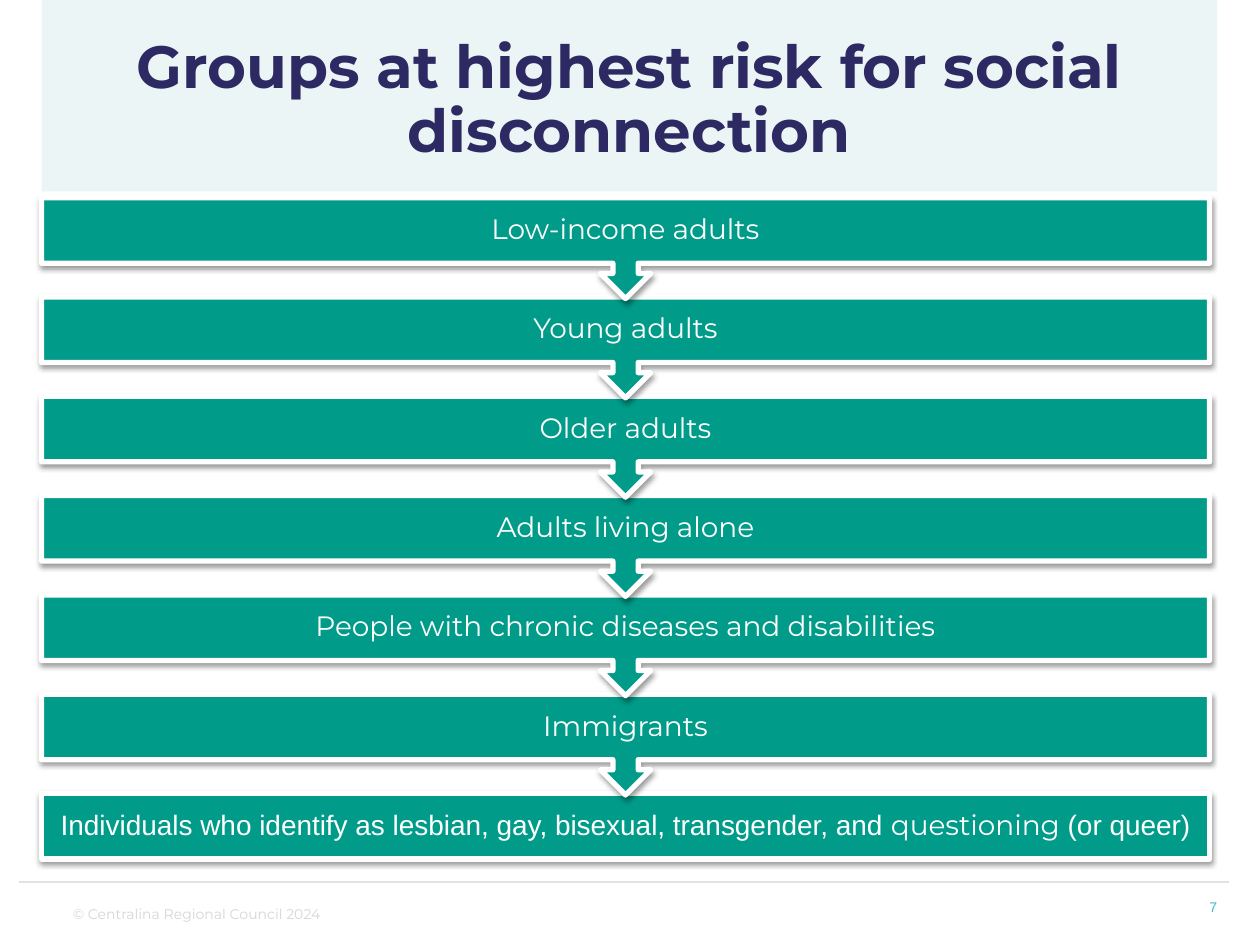
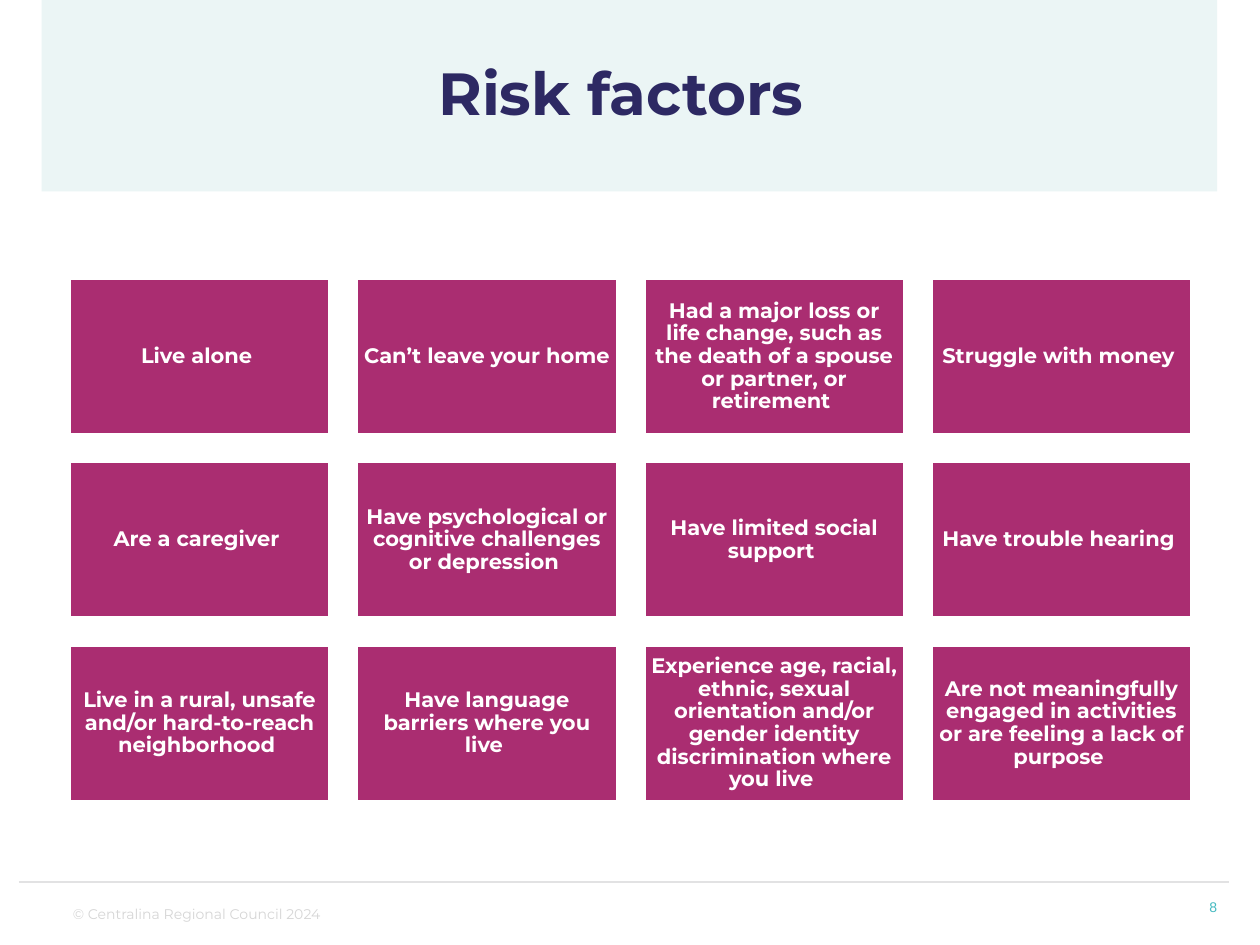
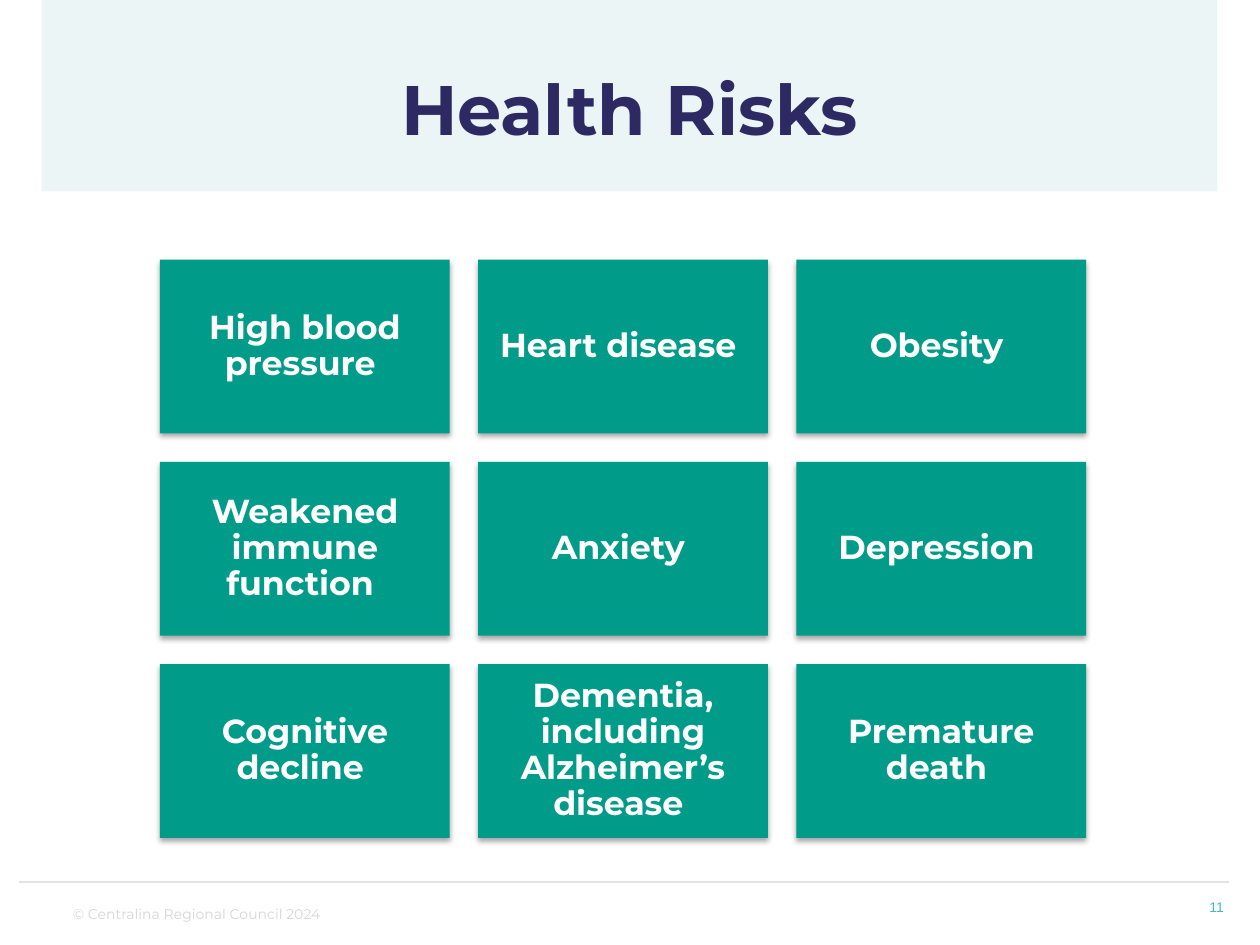
from dataclasses import dataclass

from lxml import etree
from pptx import Presentation
from pptx.dml.color import RGBColor
from pptx.enum.shapes import MSO_CONNECTOR, MSO_SHAPE
from pptx.enum.text import MSO_ANCHOR, PP_ALIGN
from pptx.oxml.ns import qn
from pptx.util import Inches, Pt

WIDTH, HEIGHT = Inches(10), Inches(7.5)
COLUMN, ROW = WIDTH / 100, HEIGHT / 75

WHITE = RGBColor(0xFF, 0xFF, 0xFF)
BLACK = RGBColor(0x00, 0x00, 0x00)
PALE_TEAL = RGBColor(0xEB, 0xF5, 0xF5)
TEAL = RGBColor(0x00, 0x9C, 0x89)
MAGENTA = RGBColor(0xAA, 0x2D, 0x71)
NAVY = RGBColor(0x2D, 0x29, 0x63)
RULE_GREY = RGBColor(0xE2, 0xE2, 0xE3)
FOOTER_GREY = RGBColor(0xD6, 0xD6, 0xD6)
NUMBER_BLUE = RGBColor(0x45, 0xBA, 0xC1)

HEADING_FONT, PLAIN_FONT = "Montserrat", "Arial"
RECTANGLE, CALLOUT = MSO_SHAPE.RECTANGLE, MSO_SHAPE.DOWN_ARROW_CALLOUT
STRAIGHT = MSO_CONNECTOR.STRAIGHT
LEFT, CENTER = PP_ALIGN.LEFT, PP_ALIGN.CENTER
TOP, MIDDLE = MSO_ANCHOR.TOP, MSO_ANCHOR.MIDDLE

FOOTER = "© Centralina Regional Council 2024"
HARD_SPACE = " "


@dataclass(frozen=True)
class Area:
    left: float
    top: float
    width: float
    height: float

    def emu(self) -> tuple[int, int, int, int]:
        return (round(self.left * COLUMN), round(self.top * ROW),
                round(self.width * COLUMN), round(self.height * ROW))


@dataclass(frozen=True)
class Grid:
    first: Area
    columns: int
    column_step: float
    row_step: float

    def cell(self, index: int) -> Area:
        row, column = divmod(index, self.columns)
        return Area(self.first.left + column * self.column_step,
                    self.first.top + row * self.row_step,
                    self.first.width, self.first.height)


@dataclass(frozen=True)
class Span:
    text: str
    font: str = HEADING_FONT


@dataclass(frozen=True)
class TextStyle:
    size: float
    color: RGBColor
    bold: bool = False
    align: PP_ALIGN = CENTER
    anchor: MSO_ANCHOR = MIDDLE
    spacing: float = 0.9
    inset: float | None = None


@dataclass(frozen=True)
class Shadow:
    blur: float
    distance: float
    opacity: int


@dataclass(frozen=True)
class TileStyle:
    fill: RGBColor
    text: TextStyle
    line_width: float = 0
    shadow: Shadow | None = None


@dataclass(frozen=True)
class Heading:
    text: str
    top: float
    size: float = 34
    spacing: float = 0.9


BAND = Area(3.3, 0, 93.3, 15.2)
NUMBER_AREA = Area(95, 70, 4.9, 4)
FOOTER_AREA = Area(4.8, 71.4, 34.2, 2.4)
NUMBER_STYLE = TextStyle(8, NUMBER_BLUE, align=LEFT, spacing=1)
FOOTER_STYLE = TextStyle(8, FOOTER_GREY, align=LEFT, anchor=TOP, spacing=1)

BAR_GRID = Grid(Area(3.3, 15.7, 92.7, 5.2), 1, 0, 7.88)
CALLOUT_HEIGHT = 8
BAR_STYLE = TileStyle(TEAL, TextStyle(16, WHITE, inset=0.12), 3, Shadow(3.1, 1.6, 38))
GROUPS = [
    [Span("Low-income adults")],
    [Span("Young adults")],
    [Span("Older adults")],
    [Span("Adults living alone")],
    [Span("People with chronic diseases and disabilities")],
    [Span("Immigrants")],
    [
        Span("Individuals who identify as lesbian, gay, bisexual, transgender, and ", PLAIN_FONT),
        Span("questioning"),
        Span(" (or queer)", PLAIN_FONT),
    ],
]

FACTOR_GRID = Grid(Area(5.5, 22.1, 20.7, 12.4), 4, 22.8, 14.55)
FACTOR_STYLE = TileStyle(MAGENTA, TextStyle(12, WHITE, True, inset=0.05), 2)
FACTORS = [
    "Live alone",
    "Can’t leave your home",
    "Had a major loss or life change, such as the death of a spouse or partner, or retirement",
    "Struggle with money",
    "Are a caregiver",
    "Have psychological or cognitive challenges or depression",
    "Have limited social support",
    "Have trouble hearing",
    "Live in a rural, unsafe and/or hard-to-reach neighborhood",
    "Have language barriers where you live",
    "Experience age, racial, ethnic, sexual orientation and/or gender identity "
    "discrimination where you live",
    "Are not meaningfully engaged in activities or are feeling a lack of purpose",
]

RISK_GRID = Grid(Area(12.7, 20.6, 23, 13.8), 3, 25.25, 16.05)
RISK_STYLE = TileStyle(TEAL, TextStyle(19, WHITE, True, inset=0.08), 0, Shadow(3.1, 1.8, 35))
RISKS = [
    "High blood pressure", "Heart disease", "Obesity",
    "Weakened immune function", "Anxiety", "Depression",
    "Cognitive decline", "Dementia, including Alzheimer’s disease", "Premature death",
]


def write(shape, spans: list[Span], style: TextStyle) -> None:
    frame = shape.text_frame
    frame.word_wrap = True
    frame.vertical_anchor = style.anchor
    if style.inset is not None:
        frame.margin_left = frame.margin_right = Inches(style.inset)
        frame.margin_top = frame.margin_bottom = Inches(style.inset)
    para = frame.paragraphs[0]
    para.alignment = style.align
    para.line_spacing = style.spacing
    for span in spans:
        run = para.add_run()
        run.text = span.text
        run.font.name = span.font
        run.font.size = Pt(style.size)
        run.font.bold = style.bold
        run.font.color.rgb = style.color


def add_text(page, area: Area, span: Span, style: TextStyle) -> None:
    write(page.shapes.add_textbox(*area.emu()), [span], style)


def cast_shadow(shape, shadow: Shadow) -> None:
    effects = shape._element.spPr.find(qn("a:effectLst"))
    outer = etree.SubElement(effects, qn("a:outerShdw"), {
        "blurRad": str(Pt(shadow.blur)), "dist": str(Pt(shadow.distance)),
        "dir": "5400000", "rotWithShape": "0"})
    color = etree.SubElement(outer, qn("a:srgbClr"), val=str(BLACK))
    etree.SubElement(color, qn("a:alpha"), val=str(shadow.opacity * 1000))


def add_tile(page, kind: MSO_SHAPE, area: Area, spans: list[Span], style: TileStyle):
    tile = page.shapes.add_shape(kind, *area.emu())
    tile.shadow.inherit = False
    tile.fill.solid()
    tile.fill.fore_color.rgb = style.fill
    if style.line_width:
        tile.line.color.rgb = WHITE
        tile.line.width = Pt(style.line_width)
    else:
        tile.line.fill.background()
    if style.shadow:
        cast_shadow(tile, style.shadow)
    write(tile, spans, style.text)
    return tile


def add_page(deck, number: int, heading: Heading):
    page = deck.slides.add_slide(deck.slide_layouts[6])
    add_tile(page, RECTANGLE, BAND, [], TileStyle(PALE_TEAL, TextStyle(12, NAVY)))
    rule = page.shapes.add_connector(
        STRAIGHT, round(1.5 * COLUMN), round(70 * ROW), round(97.5 * COLUMN), round(70 * ROW))
    rule.line.color.rgb = RULE_GREY
    rule.line.width = Pt(1)
    etree.SubElement(rule._element.spPr, qn("a:effectLst"))
    add_text(page, NUMBER_AREA, Span(str(number), PLAIN_FONT), NUMBER_STYLE)
    add_text(page, FOOTER_AREA, Span(FOOTER), FOOTER_STYLE)
    add_text(page, Area(BAND.left, heading.top, BAND.width, 12.3), Span(heading.text),
             TextStyle(heading.size, NAVY, True, spacing=heading.spacing))
    return page


def add_bars(page) -> None:
    last = len(GROUPS) - 1
    for index in range(last, -1, -1):
        area = BAR_GRID.cell(index)
        if index == last:
            add_tile(page, RECTANGLE, area, GROUPS[index], BAR_STYLE)
            continue
        callout_area = Area(area.left, area.top, area.width, CALLOUT_HEIGHT)
        callout = add_tile(page, CALLOUT, callout_area, GROUPS[index], BAR_STYLE)
        callout.adjustments[3] = area.height / CALLOUT_HEIGHT


def add_tiles(page, grid: Grid, labels: list[str], style: TileStyle) -> None:
    for index, label in enumerate(labels):
        add_tile(page, RECTANGLE, grid.cell(index), [Span(label + HARD_SPACE)], style)


def main() -> None:
    deck = Presentation()
    deck.slide_width, deck.slide_height = WIDTH, HEIGHT
    add_bars(add_page(deck, 7, Heading("Groups at highest risk for social disconnection", 1.9)))
    add_tiles(add_page(deck, 8, Heading("Risk factors ", 1.1, spacing=1)),
              FACTOR_GRID, FACTORS, FACTOR_STYLE)
    add_tiles(add_page(deck, 11, Heading("Health Risks", 2.8, 40)),
              RISK_GRID, RISKS, RISK_STYLE)
    deck.save("out.pptx")


if __name__ == "__main__":
    main()
